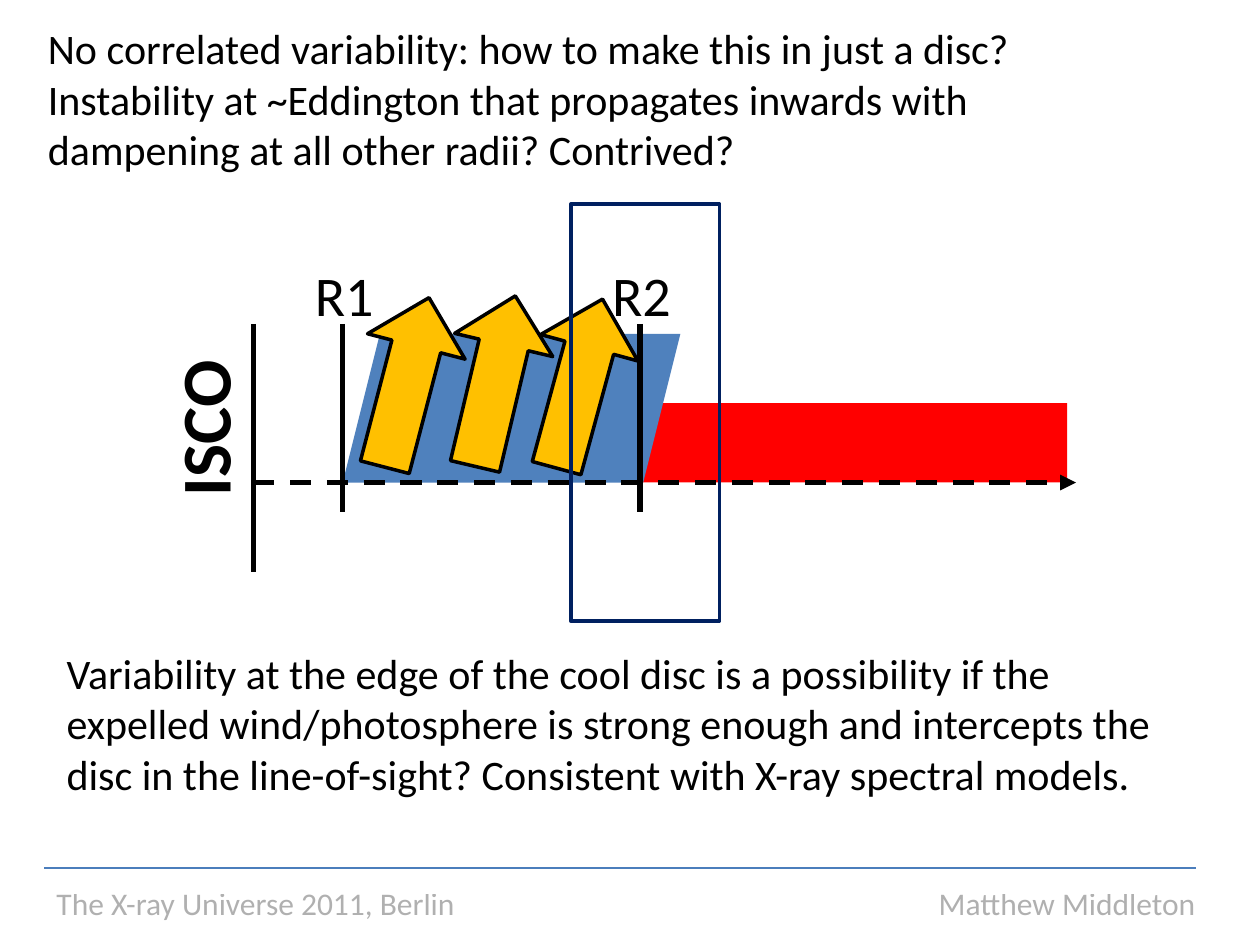
from lxml.etree import SubElement
from pptx import Presentation
from pptx.dml.color import RGBColor
from pptx.enum.dml import MSO_LINE
from pptx.enum.shapes import MSO_CONNECTOR, MSO_SHAPE
from pptx.enum.text import MSO_ANCHOR, MSO_AUTO_SIZE, PP_ALIGN
from pptx.oxml.ns import qn
from pptx.util import Inches, Pt

COLUMNS, ROWS = 100, 75


def color(hex_code):
    return RGBColor.from_string(hex_code)


class DiscSlide:
    """Draws on one slide, with lengths in columns and rows of a 100 by 75 grid."""

    font_name = "Calibri"
    ink = "000000"

    def __init__(self, presentation):
        self.column = presentation.slide_width / COLUMNS
        self.row = presentation.slide_height / ROWS
        self.slide = presentation.slides.add_slide(presentation.slide_layouts[5])
        self.shapes = self.slide.shapes

    def place(self, left, top, width, height):
        return (round(left * self.column), round(top * self.row),
                round(width * self.column), round(height * self.row))

    def fill_frame(self, frame, words, size, bold=False):
        frame.word_wrap = True
        frame.auto_size = MSO_AUTO_SIZE.NONE
        frame.vertical_anchor = MSO_ANCHOR.TOP
        frame.text = words
        paragraph = frame.paragraphs[0]
        paragraph.alignment = PP_ALIGN.LEFT
        font = paragraph.font
        font.name, font.size, font.bold = self.font_name, Pt(size), bold
        font.color.rgb = color(self.ink)
        return paragraph

    def title(self, words, box, size):
        heading = self.shapes.title
        heading.left, heading.top, heading.width, heading.height = self.place(*box)
        self.fill_frame(heading.text_frame, words, size)

    def text(self, words, box, size, bold=False, rotation=0):
        label = self.shapes.add_textbox(*self.place(*box))
        label.rotation = rotation
        return self.fill_frame(label.text_frame, words, size, bold)

    def footer(self, event, speaker, box, size, tab, opacity):
        paragraph = self.text(f"{event}\t{speaker}", box, size)
        properties = paragraph._p.find(qn("a:pPr"))
        ink_color = properties.find(".//" + qn("a:srgbClr"))
        SubElement(ink_color, qn("a:alpha"), val=str(opacity * 1000))
        stops = SubElement(properties, qn("a:tabLst"))
        SubElement(stops, qn("a:tab"), pos=str(round(tab * self.column)), algn="r")
        properties.insert(0, stops)

    def shape(self, kind, box, fill=None, outline=None, rotation=0):
        figure = self.shapes.add_shape(kind, *self.place(*box))
        figure.shadow.inherit = False
        figure.rotation = rotation
        if fill:
            figure.fill.solid()
            figure.fill.fore_color.rgb = color(fill)
        else:
            figure.fill.background()
        if outline:
            figure.line.color.rgb = color(outline)
            figure.line.width = Pt(2)
        else:
            figure.line.fill.background()

    def line(self, start, end, stroke=ink, width=3, dashed_arrow=False):
        rule = self.shapes.add_connector(
            MSO_CONNECTOR.STRAIGHT, *self.place(*start, *end))
        rule.line.color.rgb = color(stroke)
        rule.line.width = Pt(width)
        properties = rule.element.spPr
        if dashed_arrow:
            rule.line.dash_style = MSO_LINE.DASH
            SubElement(properties.find(qn("a:ln")), qn("a:tailEnd"), type="triangle")
        SubElement(properties, qn("a:effectLst"))


def main():
    presentation = Presentation()
    presentation.slide_width, presentation.slide_height = Inches(10), Inches(7.5)
    page = DiscSlide(presentation)
    isco, inner, outer, midplane, marker_top = 20.1, 27.2, 50.8, 38.3, 25.7

    page.title("No correlated variability: how to make this in just a disc? "
               "Instability at ~Eddington that propagates inwards with "
               "dampening at all other radii? Contrived?", (2.8, 1.3, 84.3, 20.2), 24)

    page.shape(MSO_SHAPE.RECTANGLE, (outer, 32, 33.9, 6.3), "FF0000")
    page.shape(MSO_SHAPE.PARALLELOGRAM, (inner, 26.5, 26.8, 11.8), "4F81BD")
    page.line((inner, marker_top), (inner, 40.6))
    page.line((isco, midplane), (85.4, midplane), dashed_arrow=True)
    page.line((outer, marker_top), (outer, 40.6))
    for left, top, tilt in ((28.3, 23.4, 14.6), (35.3, 23.3, 13.3), (42, 23.5, 15.2)):
        page.shape(MSO_SHAPE.UP_ARROW, (left, top, 8, 13.9), "FFC000", "000000", tilt)
    for name, radius in (("R1", inner), ("R2", outer)):
        page.text(name, (radius - 3.2, 20.15, 7.9, 6.4), 32)
    page.line((isco, marker_top), (isco, 45.4))
    page.text("ISCO", (7.6, 28, 17, 7.7), 40, bold=True, rotation=270)
    page.shape(MSO_SHAPE.RECTANGLE, (45.3, 16.2, 11.8, 33.1), outline="002060")

    page.footer("The X-ray Universe 2011, Berlin", "Matthew Middleton",
                (3.5, 69.7, 93.7, 4), 18, tab=90.4, opacity=31)
    page.line((3.5, 68.9), (94.9, 68.9), "4B7EBC", 0.75)
    page.text("Variability at the edge of the cool disc is a possibility if the "
              "expelled wind/photosphere is strong enough and intercepts the "
              "disc in the line-of-sight? Consistent with X-ray spectral models.",
              (4.3, 50.9, 89.8, 13.1), 24)

    presentation.save("out.pptx")


if __name__ == "__main__":
    main()
